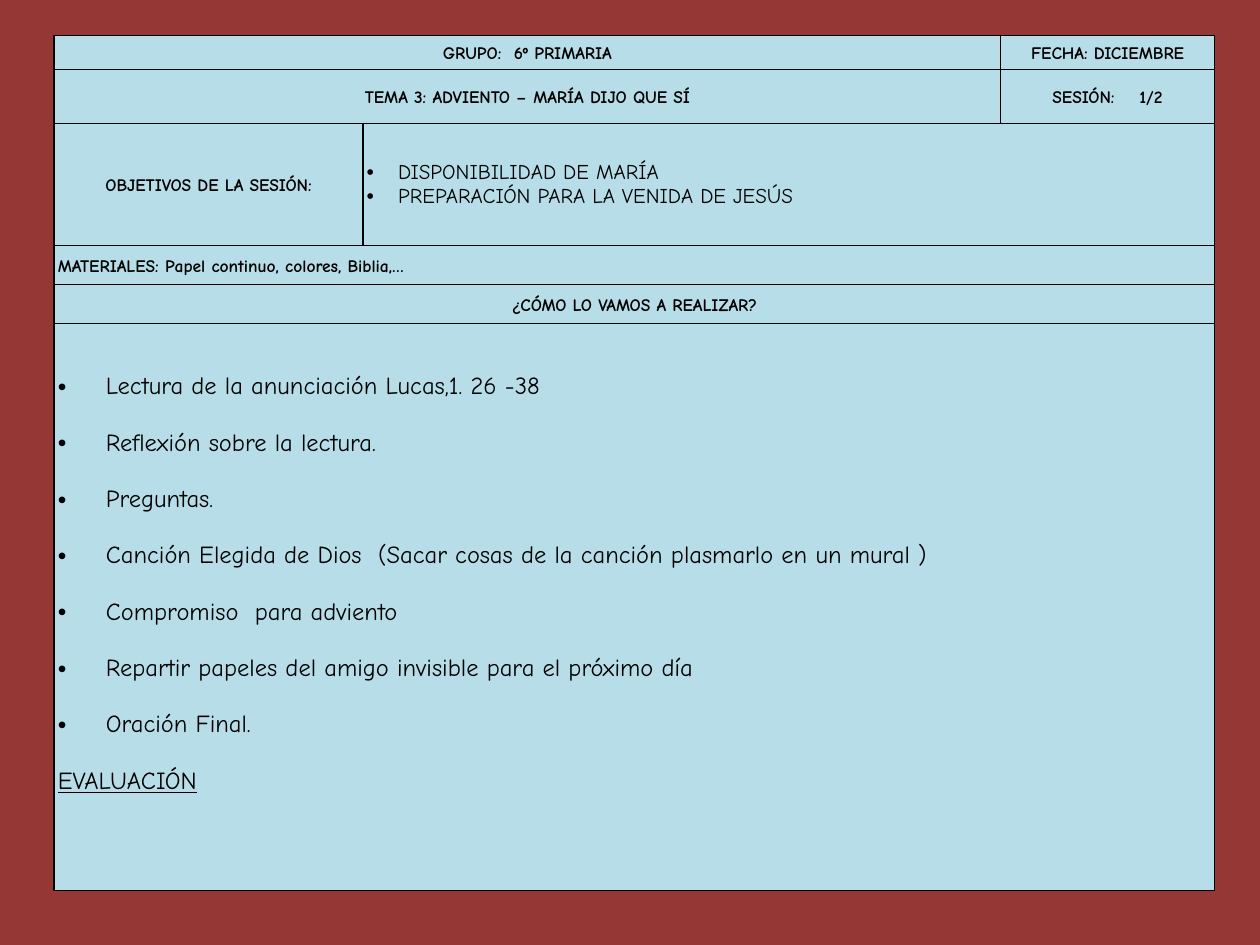
from dataclasses import dataclass

from lxml import etree
from pptx import Presentation
from pptx.dml.color import RGBColor
from pptx.enum.text import MSO_ANCHOR, PP_ALIGN
from pptx.oxml.ns import qn
from pptx.util import Inches, Pt

CENTER, LEFT = PP_ALIGN.CENTER, PP_ALIGN.LEFT
MIDDLE, TOP = MSO_ANCHOR.MIDDLE, MSO_ANCHOR.TOP
BLANK_LAYOUT = 6


@dataclass(frozen=True)
class Theme:
    font: str = "Comic Neue"
    background: str = "953735"
    cell: str = "B7DEE8"
    ink: str = "000000"
    label_size: int = 10
    goal_size: int = 12
    step_size: int = 14
    border: int = 1


THEME = Theme()
LABEL = {"size": Pt(THEME.label_size), "bold": True}
GOAL = {"size": Pt(THEME.goal_size), "bold": False}
STEP = {"size": Pt(THEME.step_size), "bold": False}
HEADING = {**STEP, "underline": True}

CENTERED = {"alignment": CENTER, "line_spacing": 1.15}
FLUSH = {"alignment": LEFT, "line_spacing": 1.15}
LISTED = {"alignment": LEFT}
SPACED = {"alignment": LEFT, "space_after": Pt(16.1)}

COLUMNS = (2.45, 5.06, 1.7)
ROWS = (0.27, 0.43, 0.97, 0.31, 0.31, 4.5)

# row, column, columns spanned, text, paragraph format
LABELS = (
    (0, 0, 2, "GRUPO:  6º PRIMARIA", CENTERED),
    (0, 2, 1, "FECHA: DICIEMBRE", CENTERED),
    (1, 0, 2, "TEMA 3: ADVIENTO – MARÍA DIJO QUE SÍ", CENTERED),
    (1, 2, 1, "SESIÓN:    1/2", CENTERED),
    (2, 0, 1, "OBJETIVOS DE LA SESIÓN:", CENTERED),
    (3, 0, 3, "MATERIALES: Papel continuo, colores, Biblia,…", FLUSH),
    (4, 0, 3, "¿CÓMO LO VAMOS A REALIZAR?", CENTERED),
)
GOALS = ("DISPONIBILIDAD DE MARÍA", "PREPARACIÓN PARA LA VENIDA DE JESÚS")
STEPS = (
    "Lectura de la anunciación Lucas,1. 26 -38",
    "Reflexión sobre la lectura.",
    "Preguntas.",
    "Canción Elegida de Dios  (Sacar cosas de la canción plasmarlo en un mural )",
    "Compromiso  para adviento",
    "Repartir papeles del amigo invisible para el próximo día",
    "Oración Final.",
)


def apply(target, values):
    for name, value in values.items():
        setattr(target, name, value)


class LessonSlide:
    def __init__(self, deck, theme):
        self.theme = theme
        self.page = deck.slides.add_slide(deck.slide_layouts[BLANK_LAYOUT])
        self.fill(self.page.background.fill, theme.background)

    def fill(self, fill, color):
        fill.solid()
        fill.fore_color.rgb = RGBColor.from_string(color)

    def table(self, left, top, columns, rows):
        frame = self.page.shapes.add_table(
            len(rows), len(columns), Inches(left), Inches(top),
            Inches(sum(columns)), Inches(sum(rows)))
        table = frame.table
        apply(table, {"first_row": False, "horz_banding": False})
        for column, width in zip(table.columns, columns):
            column.width = Inches(width)
        for row, height in zip(table.rows, rows):
            row.height = Inches(height)
        for cell in table.iter_cells():
            self.borders(cell)
            self.fill(cell.fill, self.theme.cell)
        return table

    def borders(self, cell):
        properties = cell._tc.get_or_add_tcPr()
        for side in ("lnL", "lnR", "lnT", "lnB"):
            line = etree.SubElement(properties, qn(f"a:{side}"),
                                    w=str(Pt(self.theme.border)))
            solid = etree.SubElement(line, qn("a:solidFill"))
            etree.SubElement(solid, qn("a:srgbClr"), val=self.theme.ink)

    def cell(self, table, row, column, span, anchor=MIDDLE, inset_top=0):
        """Merge across the span and return the cell ready for text."""
        cell = table.cell(row, column)
        if span > 1:
            cell.merge(table.cell(row, column + span - 1))
        apply(cell, {
            "vertical_anchor": anchor,
            "margin_left": Inches(0.03), "margin_right": Inches(0.03),
            "margin_top": Inches(inset_top), "margin_bottom": 0})
        return cell

    def paragraph(self, cell, text, layout, style, indent=0):
        """Add a paragraph; a positive indent makes it a bullet."""
        frame = cell.text_frame
        para = frame.paragraphs[0] if not frame.text else frame.add_paragraph()
        apply(para, layout)
        if indent:
            properties = para._p.get_or_add_pPr()
            properties.set("marL", str(Inches(indent)))
            properties.set("indent", str(-Inches(indent)))
            etree.SubElement(properties, qn("a:buFont"), typeface="Arial")
            etree.SubElement(properties, qn("a:buChar"), char="•")
        span = para.add_run()
        span.text = text
        apply(span.font, {"name": self.theme.font, **style})
        span.font.color.rgb = RGBColor.from_string(self.theme.ink)


def main():
    deck = Presentation()
    apply(deck, {"slide_width": Inches(10), "slide_height": Inches(7.5)})
    lesson = LessonSlide(deck, THEME)
    table = lesson.table(0.43, 0.28, COLUMNS, ROWS)

    for row, column, span, text, layout in LABELS:
        label = lesson.cell(table, row, column, span)
        lesson.paragraph(label, text, layout, LABEL)

    goals = lesson.cell(table, 2, 1, 2)
    for goal in GOALS:
        lesson.paragraph(goals, goal, LISTED, GOAL, indent=0.25)

    plan = lesson.cell(table, 5, 0, 3, anchor=TOP, inset_top=0.39)
    for step in STEPS:
        lesson.paragraph(plan, step, SPACED, STEP, indent=0.38)
    lesson.paragraph(plan, "EVALUACIÓN", LISTED, HEADING)

    deck.save("out.pptx")


if __name__ == "__main__":
    main()
